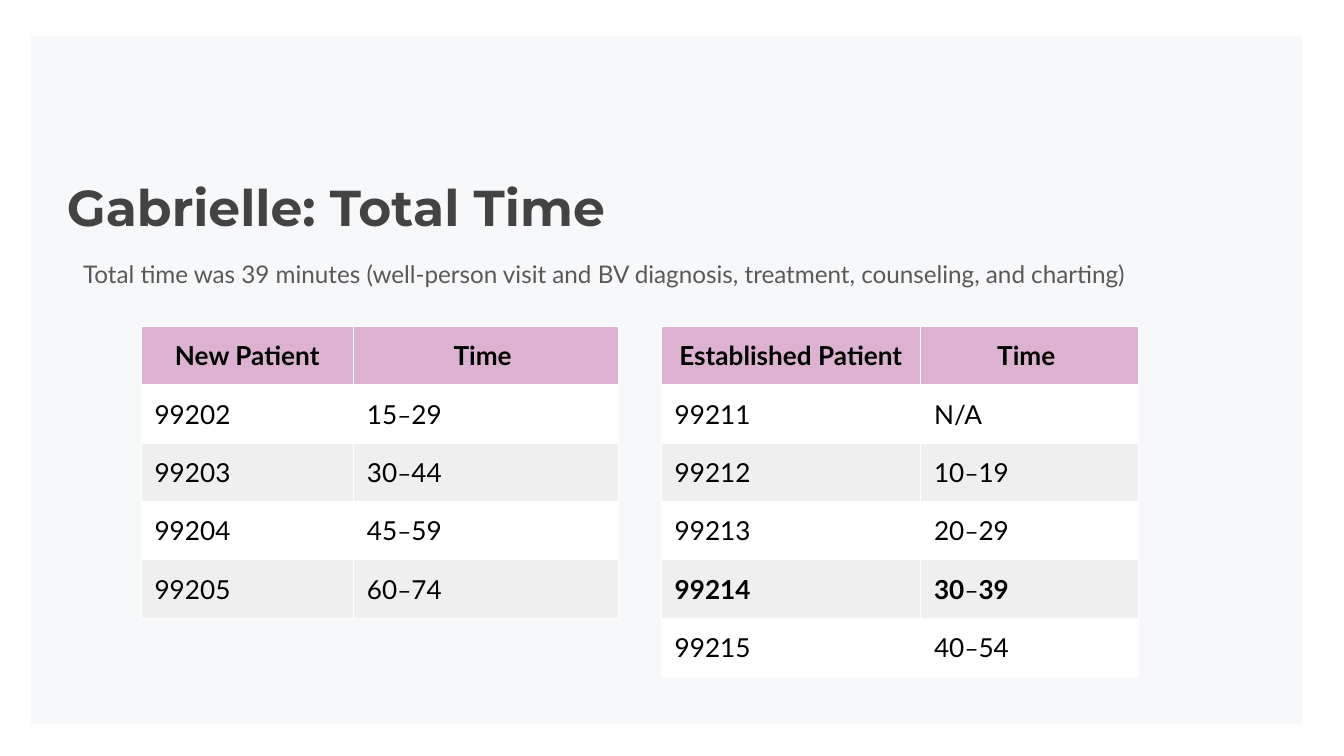
from lxml import etree
from pptx import Presentation
from pptx.dml.color import RGBColor
from pptx.enum.shapes import MSO_SHAPE
from pptx.enum.text import PP_ALIGN
from pptx.oxml.ns import qn
from pptx.util import Inches, Pt

RECTANGLE = MSO_SHAPE.RECTANGLE
LEFT, CENTER = PP_ALIGN.LEFT, PP_ALIGN.CENTER
DASH = "–"


def paint(fill, color, opacity=100):
    """Give a fill a solid hex colour, see-through when opacity is below 100."""
    fill.solid()
    fill.fore_color.rgb = RGBColor.from_string(color)
    if opacity < 100:
        for rgb in fill._xPr.iter(qn("a:srgbClr")):
            etree.SubElement(rgb, qn("a:alpha"), val=str(opacity * 1000))


class SlideStyle:
    heading_font, body_font = "Montserrat", "Lato"
    heading_color, body_color, table_color = "434343", "595959", "000000"
    header_fill, band_fills, border_color = "C87DB1", ("FFFFFF", "EFEFEF"), "FFFFFF"
    margin = Inches(0.1)

    def __init__(self, slide):
        self.slide = slide

    def panel(self, left, top, width, height, color, opacity):
        panel = self.slide.shapes.add_shape(
            RECTANGLE, Inches(left), Inches(top), Inches(width), Inches(height))
        panel.shadow.inherit = False
        panel.line.fill.background()
        paint(panel.fill, color, opacity)

    def run(self, paragraph, text, size, font, color, bold=False):
        run = paragraph.add_run()
        run.text = text
        run.font.size, run.font.name, run.font.bold = Pt(size), font, bold
        run.font.color.rgb = RGBColor.from_string(color)

    def text(self, left, top, width, height, text, size, font, color,
             bold=False, line_spacing=1.0):
        box = self.slide.shapes.add_textbox(
            Inches(left), Inches(top), Inches(width), Inches(height))
        frame = box.text_frame
        frame.word_wrap = True
        frame.margin_left = frame.margin_right = self.margin
        frame.margin_top = frame.margin_bottom = self.margin
        frame.paragraphs[0].line_spacing = line_spacing
        self.run(frame.paragraphs[0], text, size, font, color, bold)

    def borders(self, cell):
        properties = cell._tc.get_or_add_tcPr()
        for index, side in enumerate(("lnL", "lnR", "lnT", "lnB")):
            line = etree.Element(qn(f"a:{side}"), w=str(Pt(0.75)))
            fill = etree.SubElement(line, qn("a:solidFill"))
            etree.SubElement(fill, qn("a:srgbClr"), val=self.border_color)
            properties.insert(index, line)

    def cell(self, cell, text, bold, align):
        cell.margin_left = cell.margin_right = self.margin
        cell.margin_top = cell.margin_bottom = self.margin
        paragraph = cell.text_frame.paragraphs[0]
        paragraph.alignment = align
        # The dash of a range is lighter and smaller than its numbers
        start, dash, end = text.partition(DASH)
        self.run(paragraph, start, 14, self.body_font, self.table_color, bold)
        if dash:
            self.run(paragraph, dash, 13, self.body_font, self.table_color)
            self.run(paragraph, end, 14, self.body_font, self.table_color, bold)

    def table(self, left, top, widths, row_height, rows, bold_code=None):
        table = self.slide.shapes.add_table(
            len(rows), len(widths), Inches(left), Inches(top),
            Inches(sum(widths)), Inches(row_height * len(rows))).table
        for column, width in zip(table.columns, widths):
            column.width = Inches(width)
        for r, row in enumerate(rows):
            table.rows[r].height = Inches(row_height)
            header = r == 0
            for c, text in enumerate(row):
                cell = table.cell(r, c)
                self.cell(cell, text, header or row[0] == bold_code,
                          CENTER if header else LEFT)
                if header:
                    paint(cell.fill, self.header_fill, 57)
                else:
                    paint(cell.fill, self.band_fills[(r - 1) % 2])
                self.borders(cell)


def main():
    presentation = Presentation()
    # Widescreen, 16 to 9
    presentation.slide_width = Inches(10)
    presentation.slide_height = Inches(10) * 9 // 16
    style = SlideStyle(presentation.slides.add_slide(presentation.slide_layouts[6]))

    # Background panel
    style.panel(0.23, 0.27, 9.46, 5.12, "073763", 3)

    # Title and summary
    style.text(0.4, 1.21, 9.32, 0.63, "Gabrielle: Total Time", 27,
               style.heading_font, style.heading_color, bold=True)
    style.text(0.52, 1.8, 8.13, 2.87,
               "Total time was 39 minutes (well-person visit and BV diagnosis, "
               "treatment, counseling, and charting)",
               13, style.body_font, style.body_color, line_spacing=1.15)

    # Visit codes with their minutes
    new_patient = [("New Patient", "Time "), ("99202", "15–29"), ("99203", "30–44"),
                   ("99204", "45–59"), ("99205", "60–74")]
    established_patient = [("Established Patient", "Time "), ("99211", "N/A"),
                           ("99212", "10–19"), ("99213", "20–29"),
                           ("99214", "30–39"), ("99215", "40–54")]
    table_top, row_height = 2.43, 0.43
    style.table(1.05, table_top, (1.58, 1.97), row_height, new_patient)
    style.table(4.92, table_top, (1.93, 1.62), row_height, established_patient,
                bold_code="99214")

    presentation.save("out.pptx")


if __name__ == "__main__":
    main()
